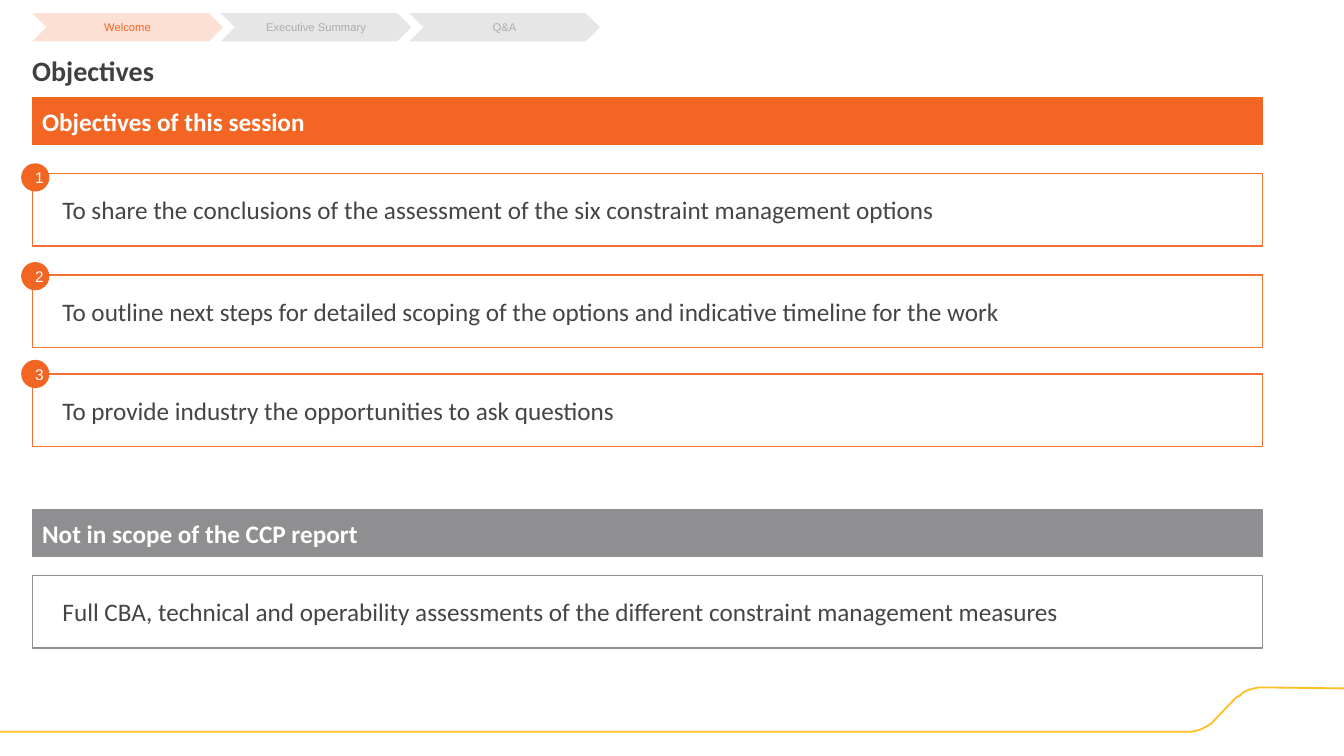
from pptx import Presentation
from pptx.dml.color import RGBColor
from pptx.enum.shapes import MSO_SHAPE
from pptx.enum.text import MSO_ANCHOR, PP_ALIGN
from pptx.util import Pt

EMU_PER_PX = 9144  # 100 px to the inch

ORANGE = "F26522"
BOX_ORANGE = "F37133"
GREY = "8F8F91"
WHITE = "FFFFFF"
BODY_TEXT = "454546"
LEFT, WIDTH = 32, 1220


def px(length):
    return length * EMU_PER_PX


def color(hex_string):
    return RGBColor.from_string(hex_string)


class SlideBuilder:
    heading_font = "Calibri"
    label_font = "Arial"

    def __init__(self, slide):
        self.slide = slide

    def add_text(self, shape, text, font, size, text_color, bold=False,
                 align=PP_ALIGN.LEFT, anchor=MSO_ANCHOR.MIDDLE, insets=(10, 5, 10, 5)):
        """Put one run in a shape; insets run left, top, right, bottom."""
        frame = shape.text_frame
        frame.word_wrap = True
        frame.vertical_anchor = anchor
        (frame.margin_left, frame.margin_top,
         frame.margin_right, frame.margin_bottom) = map(px, insets)
        paragraph = frame.paragraphs[0]
        paragraph.alignment = align
        run = paragraph.add_run()
        run.text = text
        run.font.name = font
        run.font.size = Pt(size)
        run.font.bold = bold
        run.font.color.rgb = color(text_color)

    def shape(self, kind, left, top, width, height, fill, line=None, line_width=1):
        shape = self.slide.shapes.add_shape(kind, px(left), px(top), px(width), px(height))
        shape.shadow.inherit = False
        shape.fill.solid()
        shape.fill.fore_color.rgb = color(fill)
        if line:
            shape.line.color.rgb = color(line)
            shape.line.width = Pt(line_width)
        else:
            shape.line.fill.background()
        return shape

    def title(self, text):
        box = self.slide.shapes.add_textbox(px(LEFT), px(53), px(1187), px(28))
        self.add_text(box, text, self.heading_font, 20, "404040", bold=True,
                      anchor=MSO_ANCHOR.TOP, insets=(0, 0, 0, 0))

    def banner(self, top, text, fill):
        bar = self.shape(MSO_SHAPE.RECTANGLE, LEFT, top, WIDTH, 46, fill, fill, 0.75)
        self.add_text(bar, text, self.heading_font, 18, WHITE, bold=True)

    def statement(self, top, text, line):
        box = self.shape(MSO_SHAPE.RECTANGLE, LEFT, top, WIDTH, 72, WHITE, line)
        self.add_text(box, text, self.heading_font, 18, BODY_TEXT, insets=(30, 5, 10, 5))

    def badge(self, top, number):
        circle = self.shape(MSO_SHAPE.OVAL, 21, top, 28, 28, ORANGE)
        self.add_text(circle, str(number), self.label_font, 11, WHITE, align=PP_ALIGN.CENTER)

    def step(self, left, text, fill, text_color):
        chevron = self.shape(MSO_SHAPE.CHEVRON, left, 13, 189, 28, fill)
        self.add_text(chevron, text, self.label_font, 8, text_color,
                      align=PP_ALIGN.CENTER, insets=(0, 0, 0, 0))

    def curve(self, points, line, line_width):
        start, *others = points
        builder = self.slide.shapes.build_freeform(*start, scale=EMU_PER_PX)
        builder.add_line_segments(others, close=False)
        shape = builder.convert_to_shape()
        shape.shadow.inherit = False
        shape.fill.background()
        shape.line.color.rgb = color(line)
        shape.line.width = Pt(line_width)


FOOTER_CURVE = [
    (1335, 683), (1253, 682), (1248, 682), (1244, 683), (1240, 684), (1237, 685),
    (1233, 687), (1230, 690), (1226, 692), (1204, 715), (1201, 718), (1198, 720),
    (1194, 722), (1190, 724), (1186, 725), (1182, 726), (1178, 726), (0, 726),
]
OBJECTIVES = [  # box top, badge top, text
    (172, 162, "To share the conclusions of the assessment of the six constraint management options"),
    (273, 260, "To outline next steps for detailed scoping of the options and indicative timeline for the work"),
    (371, 357, "To provide industry the opportunities to ask questions"),
]
STEPS = ["Welcome", "Executive Summary", "Q&A"]
CURRENT_STEP = "Welcome"


def main():
    presentation = Presentation()
    presentation.slide_width = px(1333)
    presentation.slide_height = px(750)
    builder = SlideBuilder(presentation.slides.add_slide(presentation.slide_layouts[6]))

    builder.curve(FOOTER_CURVE, "FFBF22", 1.29)
    for index, text in enumerate(STEPS):
        fill, text_color = ("FCE0D3", ORANGE) if text == CURRENT_STEP else ("E7E6E6", "AFABAB")
        builder.step(LEFT + index * 187, text, fill, text_color)
    builder.title("Objectives")

    builder.banner(97, "Objectives of this session", ORANGE)
    for number, (box_top, badge_top, text) in enumerate(OBJECTIVES, start=1):
        builder.statement(box_top, text, BOX_ORANGE)
        builder.badge(badge_top, number)

    builder.banner(506, "Not in scope of the CCP report", GREY)
    builder.statement(571, "Full CBA, technical and operability assessments of the different "
                           "constraint management measures", GREY)

    presentation.save("out.pptx")


if __name__ == "__main__":
    main()
